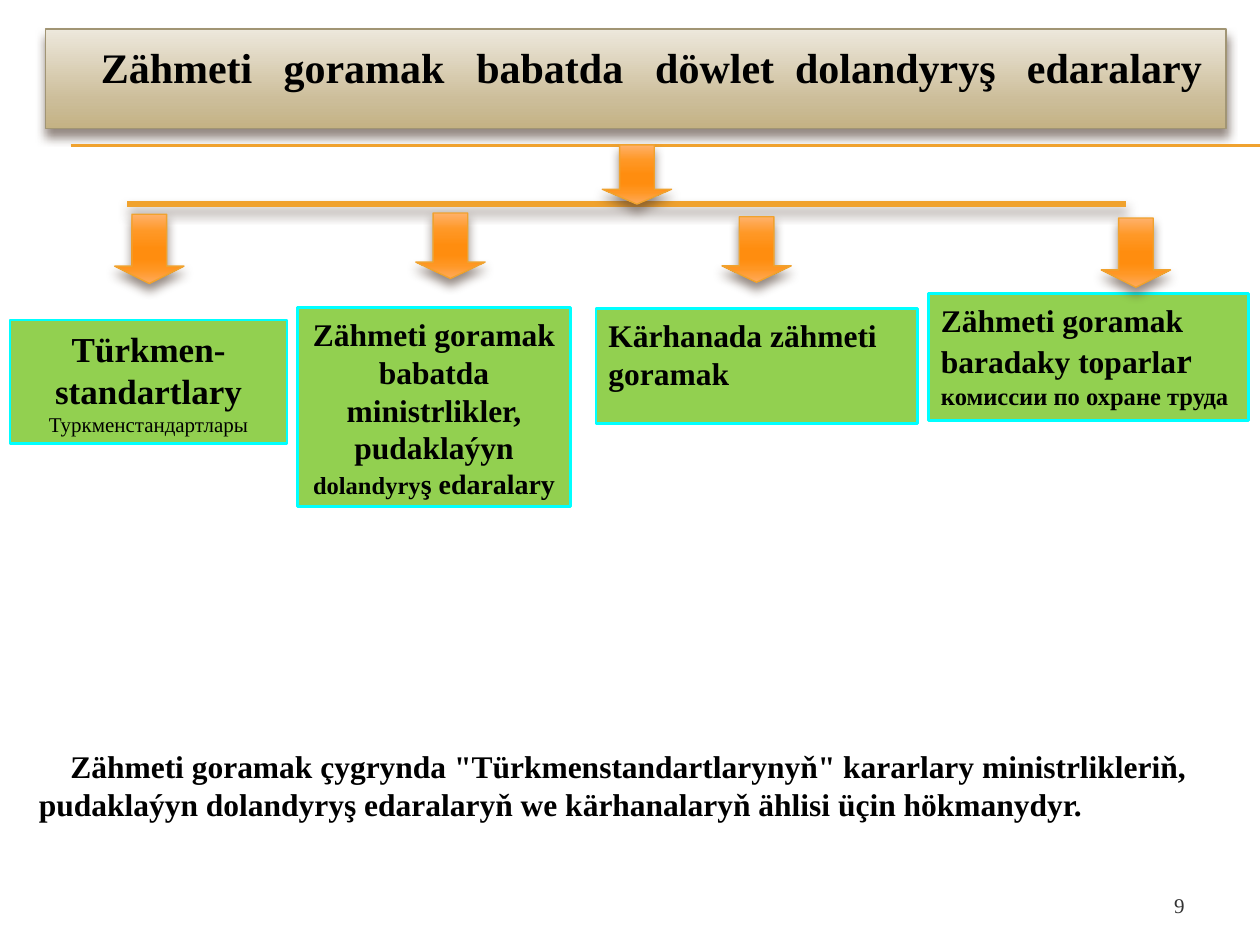
from pptx import Presentation
from pptx.dml.color import RGBColor
from pptx.enum.shapes import MSO_CONNECTOR, MSO_SHAPE
from pptx.enum.text import MSO_ANCHOR, PP_ALIGN
from pptx.oxml import parse_xml
from pptx.oxml.ns import nsdecls
from pptx.util import Inches, Pt

THEME = {
    "font": "Times New Roman",
    "ink": RGBColor.from_string("000000"),
    "gray": RGBColor.from_string("333333"),
    "gold": RGBColor.from_string("F0A22E"),
    "tan": RGBColor.from_string("A19574"),
    "green": RGBColor.from_string("92D050"),
    "cyan": RGBColor.from_string("00FFFF"),
    "shade": "4E3B30",
    "sand": [(0, "EDE8DC"), (72, "CCBD99"), (100, "C4B284")],
    "flame": [(0, "FFB16A"), (25, "FF9826"), (50, "FF8D0F"),
              (65, "FF8D0F"), (80, "FF9724"), (100, "FFAA5C")],
    "head": 24, "large": 20, "text": 18, "mid": 16, "small": 14, "tiny": 12,
}

deck = Presentation()
deck.slide_width, deck.slide_height = Inches(10), Inches(7.5)
col, row = deck.slide_width / 100, deck.slide_height / 75
slide = deck.slides.add_slide(deck.slide_layouts[5])
shapes = slide.shapes


def finish(shape, stops=None):
    """Add a soft shadow and, if stops are given, a vertical gradient."""
    props = shape._element.spPr
    if stops:
        shape.fill.gradient()
        marks = "".join(
            f'<a:gs pos="{pos * 1000}"><a:srgbClr val="{tone}"/></a:gs>'
            for pos, tone in stops)
        old = props.find("{*}gradFill")
        props.replace(old, parse_xml(
            f'<a:gradFill {nsdecls("a")} rotWithShape="1"><a:gsLst>{marks}'
            '</a:gsLst><a:lin ang="5400000" scaled="0"/></a:gradFill>'))
    for old in props.findall("{*}effectLst"):
        props.remove(old)
    props.append(parse_xml(
        f'<a:effectLst {nsdecls("a")}><a:outerShdw blurRad="{Pt(6)}" '
        f'dist="{Pt(4)}" dir="5400000" rotWithShape="0">'
        f'<a:srgbClr val="{THEME["shade"]}"><a:alpha val="60000"/></a:srgbClr>'
        '</a:outerShdw></a:effectLst>'))


def write(shape, runs, align=PP_ALIGN.LEFT, tone="ink"):
    """Fill the first paragraph with (text, size, bold) runs."""
    frame = shape.text_frame
    frame.word_wrap = True
    para = frame.paragraphs[0]
    para.alignment = align
    for words, size, bold in runs:
        run = para.add_run()
        run.text = words
        run.font.name, run.font.size = THEME["font"], Pt(THEME[size])
        run.font.bold, run.font.color.rgb = bold, THEME[tone]
    return para


# Title bar, with its words spread over tab stops
title = shapes.title
title.left, title.top = int(3.6 * col), int(2.3 * row)
title.width, title.height = int(93.7 * col), int(7.9 * row)
title.line.color.rgb, title.line.width = THEME["tan"], Pt(0.79)
finish(title, THEME["sand"])
frame = title.text_frame
frame.vertical_anchor = MSO_ANCHOR.TOP
frame.margin_left, frame.margin_top = int(4.4 * col), int(row)
frame.margin_right = 0
tabs = "".join(f'<a:tab pos="{int(stop * col)}" algn="l"/>'
               for stop in (14.5, 29.8, 44, 55.1, 73.5))
frame.paragraphs[0]._p.get_or_add_pPr().append(
    parse_xml(f'<a:tabLst {nsdecls("a")}>{tabs}</a:tabLst>'))
words = "Zähmeti goramak babatda döwlet dolandyryş edaralary".split()
write(title, [("\t".join(words), "head", True)])

# Two hairlines below the title, then the branch bar
for left, right, top, width in [(5.6, 100, 11.5, 0.75), (5.6, 100, 11.6, 0.75),
                                (10.1, 89.4, 16.2, 3)]:
    line = shapes.add_connector(
        MSO_CONNECTOR.STRAIGHT, int(left * col), int(top * row),
        int(right * col), int(top * row))
    line.line.color.rgb, line.line.width = THEME["gold"], Pt(width)
    if width == 3:
        finish(line)
    else:
        line._element.spPr.append(parse_xml(f'<a:effectLst {nsdecls("a")}/>'))

# Agencies: left, top, width, height, alignment, runs
boxes = [
    (0.8, 25.4, 22, 9.8, PP_ALIGN.CENTER,
     [("Türkmen- standartlary ", "large", True),
      ("Туркменстандартлары", "tiny", False)]),
    (23.6, 24.4, 21.7, 15.8, PP_ALIGN.CENTER,
     [("Zähmeti goramak babatda ministrlikler, pudaklaýyn ", "text", True),
      ("dolandyry", "small", True), ("ş edaralary", "mid", True)]),
    (47.3, 24.5, 25.5, 9.1, PP_ALIGN.LEFT,
     [("Kärhanada zähmeti goramak", "text", True)]),
    (73.7, 23.3, 25.4, 10.1, PP_ALIGN.LEFT,
     [("Zähmeti goramak baradaky toparla", "text", True),
      ("r ", "large", True), ("комиссии по охране труда", "small", True)]),
]
for left, top, width, height, align, runs in boxes:
    box = shapes.add_shape(MSO_SHAPE.RECTANGLE, int(left * col), int(top * row),
                           int(width * col), int(height * row))
    box.shadow.inherit = False
    box.fill.solid()
    box.fill.fore_color.rgb = THEME["green"]
    box.line.color.rgb, box.line.width = THEME["cyan"], Pt(1.5)
    box.text_frame.vertical_anchor = MSO_ANCHOR.TOP
    box.text_frame.margin_top = int(0.6 * row)
    write(box, runs, align)

# Arrows: one from the title, one to each agency
for left, top, height in [(47.8, 11.5, 4.7), (9.1, 17, 5.5), (33, 16.9, 5.2),
                          (57.3, 17.2, 5.2), (87.4, 17.3, 5.5)]:
    arrow = shapes.add_shape(MSO_SHAPE.DOWN_ARROW, int(left * col),
                             int(top * row), int(5.5 * col), int(height * row))
    arrow.adjustments[0], arrow.adjustments[1] = 0.5, 0.25
    arrow.line.color.rgb, arrow.line.width = THEME["gold"], Pt(0.79)
    finish(arrow, THEME["flame"])

note = shapes.add_textbox(int(2.1 * col), int(58.8 * row),
                          int(94.2 * col), int(13.1 * row))
para = write(note, [(
    'Zähmeti goramak çygrynda "Türkmenstandartlarynyň" kararlary '
    "ministrlikleriň, pudaklaýyn dolandyryş edaralaryň we kärhanalaryň "
    "ählisi üçin hökmanydyr.", "text", True)])
para._p.get_or_add_pPr().set("indent", str(int(2.5 * col)))

number = shapes.add_textbox(int(89.4 * col), int(68.3 * row),
                            int(5.6 * col), int(5 * row))
number.text_frame.vertical_anchor = MSO_ANCHOR.BOTTOM
write(number, [("9", "tiny", False)], PP_ALIGN.RIGHT, "gray")

deck.save("out.pptx")
